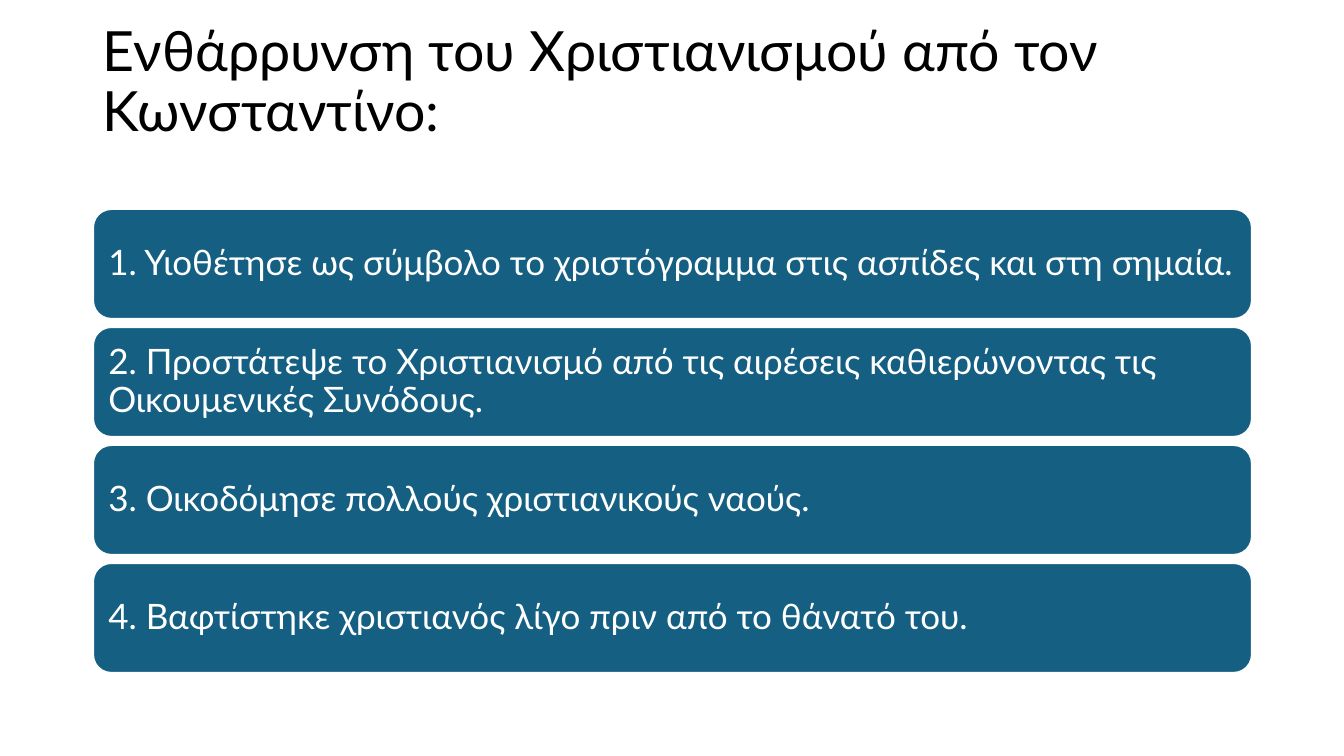
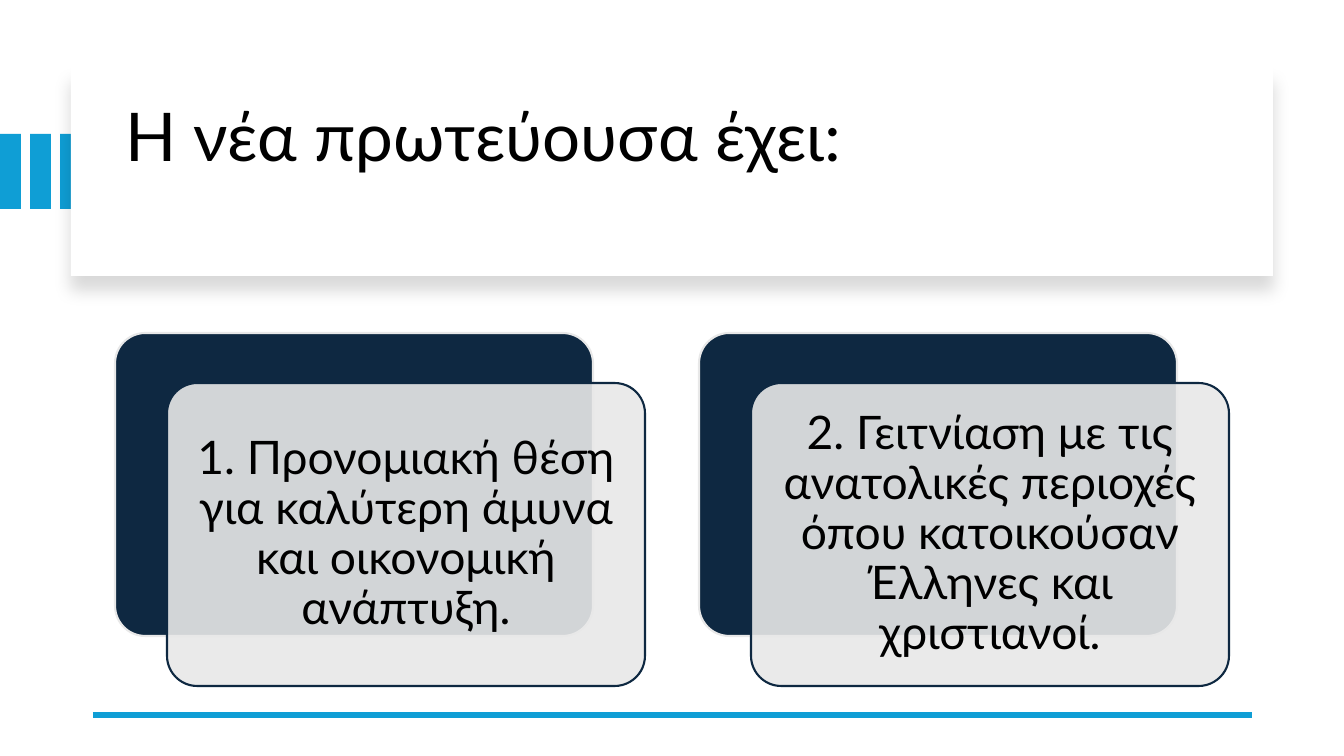
from lxml import etree
from pptx import Presentation
from pptx import util as u
from pptx.dml.color import RGBColor
from pptx.enum import shapes, text
from pptx.oxml.ns import qn

PX = 914400 / 100.8
WIDTH, HEIGHT = 1344, 756
MARGIN, CONTENT_W = 93, 1159

BLACK = RGBColor(0x00, 0x00, 0x00)
WHITE = RGBColor(0xFF, 0xFF, 0xFF)
TEAL = RGBColor(0x15, 0x60, 0x82)
NAVY = RGBColor(0x0E, 0x28, 0x41)
SKY = RGBColor(0x0F, 0x9E, 0xD5)
GREY = RGBColor(0xE8, 0xE8, 0xE8)

RECT = shapes.MSO_SHAPE.RECTANGLE
ROUNDED = shapes.MSO_SHAPE.ROUNDED_RECTANGLE
LEFT, CENTER = text.PP_ALIGN.LEFT, text.PP_ALIGN.CENTER
TOP, MIDDLE = text.MSO_ANCHOR.TOP, text.MSO_ANCHOR.MIDDLE


def px(n):
    return u.Emu(round(n * PX))


class Deck:
    font = "Lato"
    line_spacing = 0.9

    def __init__(self):
        self.prs = Presentation()
        self.prs.slide_width, self.prs.slide_height = px(WIDTH), px(HEIGHT)
        self.s = None

    def new_slide(self):
        self.s = self.prs.slides.add_slide(self.prs.slide_layouts[6])

    def set_text(self, sp, words, size, color, align=LEFT, anchor=MIDDLE, inset=10):
        tf = sp.text_frame
        tf.word_wrap = True
        tf.vertical_anchor = anchor
        tf.margin_left = tf.margin_right = px(inset)
        tf.margin_top = tf.margin_bottom = px(inset)
        tf.text = words
        p = tf.paragraphs[0]
        p.alignment, p.line_spacing = align, self.line_spacing
        r = p.runs[0]
        r.font.name, r.font.size = self.font, u.Pt(size)
        r.font.color.rgb = color

    def title(self, x, y, w, h, words, size):
        sp = self.s.shapes.add_textbox(px(x), px(y), px(w), px(h))
        self.set_text(sp, words, size, BLACK, anchor=TOP, inset=5)
        sp.text_frame.margin_left = sp.text_frame.margin_right = px(10)

    def box(self, x, y, w, h, fill, line=None, kind=RECT, adj=None):
        sp = self.s.shapes.add_shape(kind, px(x), px(y), px(w), px(h))
        sp.shadow.inherit = False
        sp.fill.solid()
        sp.fill.fore_color.rgb = fill
        if line is None:
            sp.line.fill.background()
        else:
            sp.line.color.rgb = line
            sp.line.width = u.Pt(1.5)
        if adj is not None:
            sp.adjustments[0] = adj
        return sp

    def panel(self, x, y, w, h):
        """White box with a soft shadow below it."""
        sp = self.box(x, y, w, h, WHITE)
        effects = sp._element.spPr.find(qn("a:effectLst"))
        shadow = etree.SubElement(
            effects, qn("a:outerShdw"), blurRad=str(u.Pt(11)), dist=str(u.Pt(10)),
            dir="5400000", algn="ctr", rotWithShape="0")
        color = etree.SubElement(shadow, qn("a:srgbClr"), val=str(BLACK))
        etree.SubElement(color, qn("a:alpha"), val="15000")

    def bar(self, x, y, w, h, words):
        sp = self.box(x, y, w, h, TEAL, WHITE, ROUNDED)
        self.set_text(sp, words, 25, WHITE)

    def card(self, x, y, w, h, words):
        """Navy card with a translucent text card shifted over it."""
        self.box(x, y, w, h, NAVY, GREY, ROUNDED, 0.1)
        front = self.box(x + 52, y + 50, w, h, GREY, NAVY, ROUNDED, 0.1)
        color = front._element.spPr.find(qn("a:solidFill")).find(qn("a:srgbClr"))
        etree.SubElement(color, qn("a:alpha"), val="90000")
        self.set_text(front, words, 33, BLACK, CENTER, inset=14)

    def rule(self, x, y, w):
        ln = self.s.shapes.add_connector(
            shapes.MSO_CONNECTOR.STRAIGHT, px(x), px(y), px(x + w), px(y))
        ln.line.color.rgb = SKY
        ln.line.width = u.Pt(4.5)
        etree.SubElement(ln._element.spPr, qn("a:effectLst"))


def support_slide(deck):
    deck.new_slide()
    deck.title(MARGIN, 19, CONTENT_W, 130,
               "Ενθάρρυνση του Χριστιανισμού από τον Κωνσταντίνο:", 39.6)
    measures = [
        "1. Υιοθέτησε ως σύμβολο το χριστόγραμμα στις ασπίδες και στη σημαία.",
        "2. Προστάτεψε το Χριστιανισμό από τις αιρέσεις καθιερώνοντας τις "
        "Οικουμενικές Συνόδους.",
        "3. Οικοδόμησε πολλούς χριστιανικούς ναούς.",
        "4. Βαφτίστηκε χριστιανός λίγο πριν από το θάνατό του.",
    ]
    for i, words in enumerate(measures):
        deck.bar(MARGIN, 209 + 118 * i, CONTENT_W, 110, words)


def capital_slide(deck):
    deck.new_slide()
    for i in range(3):
        deck.box(30 * i, 134, 21, 75, SKY)
    deck.panel(71, 67, 1202, 209)
    deck.title(115, 98, 1122, 160, "Η νέα πρωτεύουσα έχει:", 48)
    deck.rule(MARGIN, 715, CONTENT_W)
    advantages = [
        "1. Προνομιακή θέση για καλύτερη άμυνα και οικονομική ανάπτυξη.",
        "2. Γειτνίαση με τις ανατολικές περιοχές όπου κατοικούσαν Έλληνες "
        "και χριστιανοί.",
    ]
    for i, words in enumerate(advantages):
        deck.card(115 + 584 * i, 333, 478, 303, words)


def main():
    deck = Deck()
    support_slide(deck)
    capital_slide(deck)
    deck.prs.save("out.pptx")


if __name__ == "__main__":
    main()
